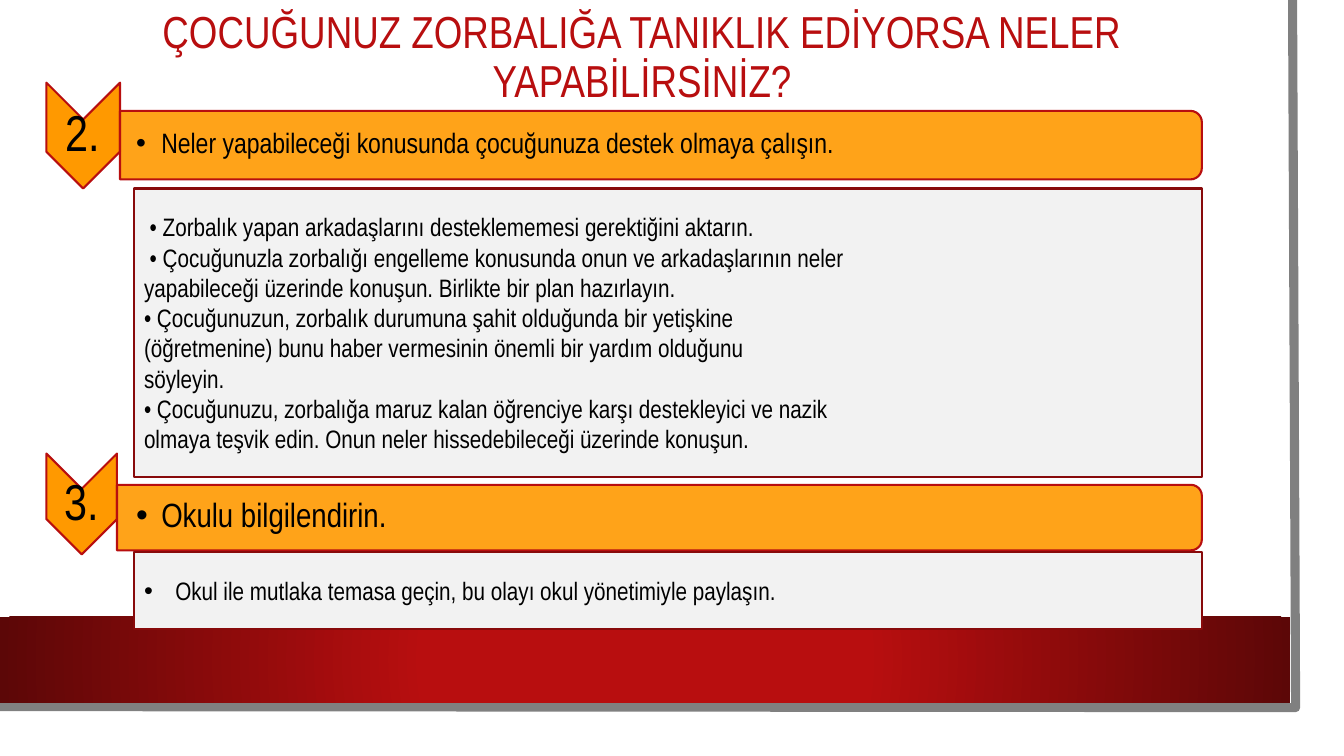
from dataclasses import dataclass

from lxml.etree import SubElement
from pptx import Presentation
from pptx.dml.color import RGBColor
from pptx.enum.shapes import MSO_SHAPE as Preset
from pptx.enum.text import MSO_ANCHOR as Anchor, MSO_AUTO_SIZE as AutoSize, PP_ALIGN as Align
from pptx.oxml import parse_xml
from pptx.oxml.ns import nsdecls, qn
from pptx.shapes.autoshape import Shape
from pptx.slide import Slide
from pptx.util import Inches, Pt

FONT = "Arial Narrow"
COLORS = {
    "white": "FFFFFF", "black": "000000", "red": "B80E0F", "maroon": "880A0B",
    "wine": "5C0707", "orange": "FF9900", "pale": "F2F2F2", "gray": "808080",
}
TITLE = "ÇOCUĞUNUZ ZORBALIĞA TANIKLIK EDİYORSA NELER YAPABİLİRSİNİZ?"


@dataclass(frozen=True)
class Box:
    """A visible rectangle in inches."""
    left: float
    top: float
    width: float
    height: float

    def lengths(self) -> list[int]:
        return [Inches(value) for value in (self.left, self.top, self.width, self.height)]

    def turned(self) -> "Box":
        """Return the frame that covers this box after a quarter turn."""
        shift = (self.width - self.height) / 2
        return Box(self.left + shift, self.top - shift, self.height, self.width)


@dataclass(frozen=True)
class TextStyle:
    """How the paragraphs of one shape are set."""
    size: int
    color: str = "black"
    align: Align = Align.LEFT
    spacing: float = 1.0
    hanging: float = 0.0


@dataclass(frozen=True)
class Step:
    """A numbered heading with its detail panel."""
    number: str
    chevron: Box
    number_box: Box
    bar: Box
    heading: str
    heading_box: Box
    heading_size: int
    heading_insets: tuple[float, float]
    panel: Box
    details: list[str]
    detail_hanging: float = 0.0


STEPS = [
    Step("2.", Box(0.46, 0.82, 0.73, 1.05), Box(0.46, 1.19, 0.73, 0.31),
         Box(1.19, 1.1, 10.73, 0.68),
         "Neler yapabileceği konusunda çocuğunuza destek olmaya çalışın.",
         Box(1.19, 1.13, 10.7, 0.61), 20, (0.16, 0.01), Box(1.33, 1.87, 10.59, 2.86),
         [" • Zorbalık yapan arkadaşlarını desteklememesi gerektiğini aktarın.",
          " • Çocuğunuzla zorbalığı engelleme konusunda onun ve arkadaşlarının neler",
          "yapabileceği üzerinde konuşun. Birlikte bir plan hazırlayın.",
          "• Çocuğunuzun, zorbalık durumuna şahit olduğunda bir yetişkine",
          "(öğretmenine) bunu haber vermesinin önemli bir yardım olduğunu",
          "söyleyin.",
          "• Çocuğunuzu, zorbalığa maruz kalan öğrenciye karşı destekleyici ve nazik",
          "olmaya teşvik edin. Onun neler hissedebileceği üzerinde konuşun."]),
    Step("3.", Box(0.46, 4.5, 0.7, 1), Box(0.46, 4.85, 0.7, 0.3),
         Box(1.16, 4.81, 10.76, 0.65),
         "Okulu bilgilendirin.",
         Box(1.16, 4.83, 10.73, 0.59), 24, (0.19, 0.02), Box(1.33, 5.48, 10.59, 0.76),
         ["Okul ile mutlaka temasa geçin, bu olayı okul yönetimiyle paylaşın."], 0.31),
]


def rgb(name: str) -> RGBColor:
    return RGBColor.from_string(COLORS[name])


def write(shape: Shape, lines: list[str], style: TextStyle,
          insets: tuple[float, float] = (0.1, 0.05)) -> None:
    """Fill a shape with paragraphs; insets are left, then the other sides."""
    frame = shape.text_frame
    frame.word_wrap = True
    frame.auto_size = AutoSize.NONE
    frame.vertical_anchor = Anchor.MIDDLE
    frame.margin_left = Inches(insets[0])
    frame.margin_right = frame.margin_top = frame.margin_bottom = Inches(insets[1])
    for index, line in enumerate(lines):
        paragraph = frame.add_paragraph() if index else frame.paragraphs[0]
        paragraph.add_run().text = line
        paragraph.alignment = style.align
        paragraph.line_spacing = style.spacing
        if style.hanging:
            properties = paragraph._p.get_or_add_pPr()
            properties.set("marL", str(Inches(style.hanging)))
            properties.set("indent", str(-Inches(style.hanging)))
            SubElement(properties, qn("a:buFont")).set("typeface", "Arial")
            SubElement(properties, qn("a:buChar")).set("char", "•")
        paragraph.font.name = FONT
        paragraph.font.size = Pt(style.size)
        paragraph.font.color.rgb = rgb(style.color)


def add_shape(slide: Slide, preset: Preset, box: Box, fill: str, line: str | None = None,
              quarter_turn: bool = False) -> Shape:
    """Add a flat preset shape that covers the given box."""
    frame = box.turned() if quarter_turn else box
    shape = slide.shapes.add_shape(preset, *frame.lengths())
    shape.rotation = 90 if quarter_turn else 0
    shape.shadow.inherit = False
    shape.fill.solid()
    shape.fill.fore_color.rgb = rgb(fill)
    if line:
        shape.line.color.rgb = rgb(line)
        shape.line.width = Pt(1.5)
    else:
        shape.line.fill.background()
    return shape


def add_label(slide: Slide, box: Box, text: str, style: TextStyle,
              insets: tuple[float, float]) -> None:
    write(slide.shapes.add_textbox(*box.lengths()), [text], style, insets)


def add_backdrop(slide: Slide) -> None:
    """Add the page, its gray edge and the red band."""
    add_shape(slide, Preset.RECTANGLE, Box(0, 0, 13.1, 7.27), "white")
    builder = slide.shapes.build_freeform(Inches(12.82), 0)
    builder.add_line_segments([(Inches(12.85), Inches(7.02)), (0, Inches(7.01))], close=False)
    edge = builder.convert_to_shape()
    edge.shadow.inherit = False
    edge.fill.background()
    edge.line.color.rgb = rgb("gray")
    edge.line.width = Pt(6.5)
    band = add_shape(slide, Preset.RECTANGLE, Box(0, 6.12, 12.8, 0.85), "red")
    solid = band._element.spPr.find(qn("a:solidFill"))
    stops = "".join(
        f'<a:gs pos="{position}"><a:srgbClr val="{COLORS[name]}"/></a:gs>'
        for position, name in ((34000, "red"), (100000, "wine")))
    solid.getparent().replace(solid, parse_xml(
        f'<a:gradFill {nsdecls("a")} rotWithShape="1"><a:gsLst>{stops}</a:gsLst>'
        '<a:path path="circle"><a:fillToRect l="50000" t="50000" r="50000" b="50000"/>'
        '</a:path></a:gradFill>'))


def add_title(slide: Slide) -> None:
    """Place the title in front of the backdrop."""
    title = slide.shapes.title
    title.left, title.top, title.width, title.height = Box(0.66, 0.28, 11.37, 0.6).lengths()
    write(title, [TITLE], TextStyle(32, "red", Align.CENTER, 0.9))
    title.element.getparent().append(title.element)


def add_step(slide: Slide, step: Step) -> None:
    """Draw one numbered step."""
    add_shape(slide, Preset.CHEVRON, step.chevron, "orange", "red", quarter_turn=True)
    add_label(slide, step.number_box, step.number,
              TextStyle(36, align=Align.CENTER, spacing=0.9), (0.03, 0.03))
    bar = add_shape(slide, Preset.ROUND_2_SAME_RECTANGLE, step.bar, "orange", "red",
                    quarter_turn=True)
    bar_color = bar._element.spPr.find(qn("a:solidFill"))[0]
    SubElement(bar_color, qn("a:alpha")).set("val", "90000")
    add_label(slide, step.heading_box, step.heading,
              TextStyle(step.heading_size, spacing=0.9, hanging=0.25), step.heading_insets)
    panel = add_shape(slide, Preset.RECTANGLE, step.panel, "pale", "maroon")
    write(panel, step.details, TextStyle(18, hanging=step.detail_hanging))


def main() -> None:
    presentation = Presentation()
    presentation.slide_width = Inches(13.33)
    presentation.slide_height = Inches(7.5)
    slide = presentation.slides.add_slide(presentation.slide_layouts.get_by_name("Title Only"))
    add_backdrop(slide)
    add_title(slide)
    for step in STEPS:
        add_step(slide, step)
    presentation.save("out.pptx")


if __name__ == "__main__":
    main()
